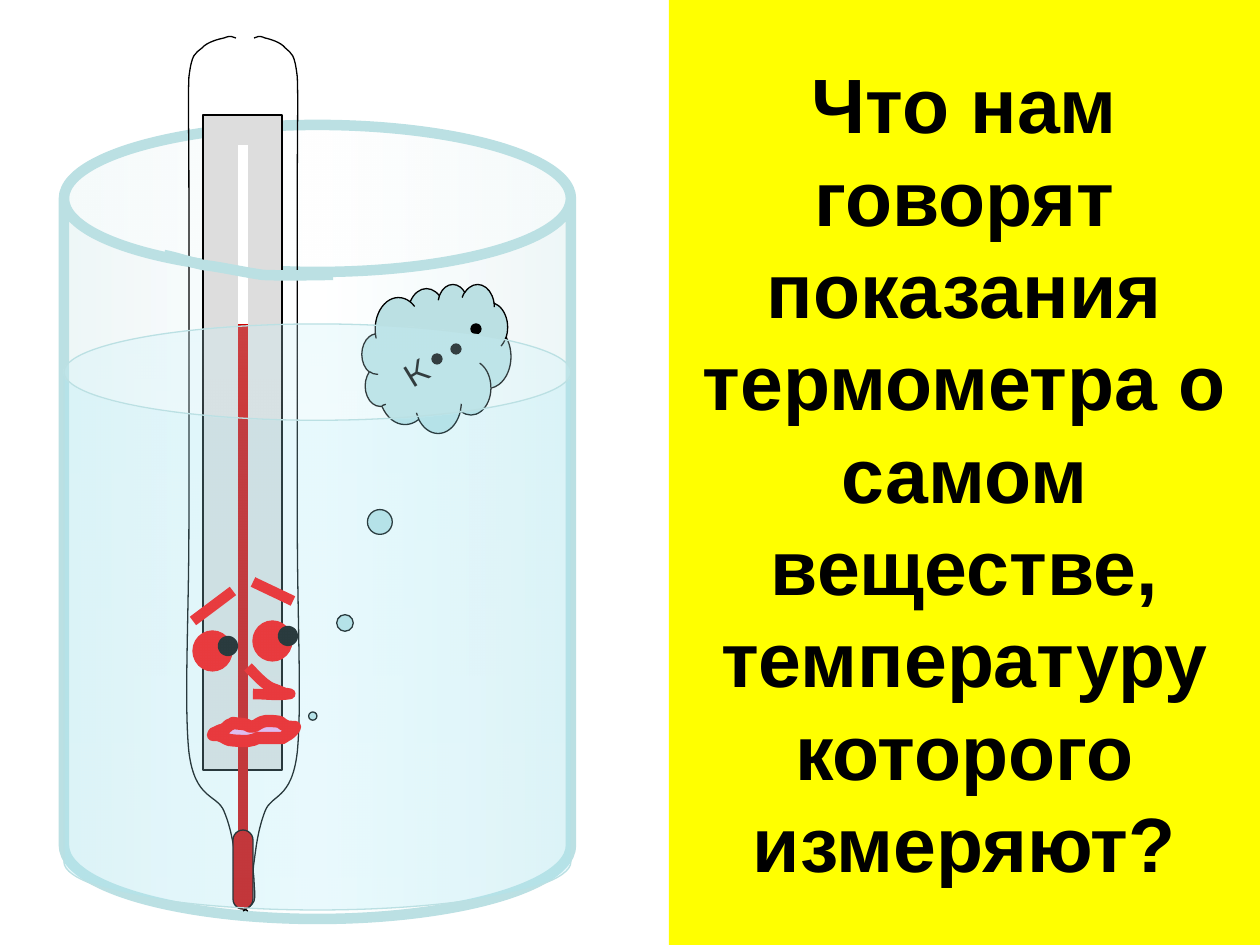
from dataclasses import dataclass

from lxml import etree
from pptx import Presentation
from pptx import util as u
from pptx.dml.color import RGBColor
from pptx.enum import shapes, text
from pptx.oxml import ns

PX = u.Inches(1) / 126
PRESET = shapes.MSO_SHAPE


@dataclass(frozen=True)
class Theme:
    panel: str = "FFFF00"
    glass: str = "BBE0E3"
    shine: str = "FFFFFF"
    water: str = "A6EAF8"
    ink: str = "000000"
    scale: str = "DDDDDD"
    mercury: str = "CC0000"
    face: str = "FF0000"
    lips: str = "F1ADEC"
    question_font: str = "Arial"
    question_size: int = 44
    thought_font: str = "Montserrat"
    thought_size: int = 24
    thin: float = 0.75
    thick: int = 6
    lip_width: int = 7


@dataclass(frozen=True)
class Body:
    preset: int
    box: tuple[int, int, int, int]
    fill: str | None
    line: str | None
    width: float = 0.75
    adjust: tuple[float, ...] = ()


@dataclass(frozen=True)
class Stroke:
    start: tuple[int, int]
    end: tuple[int, int]
    color: str


@dataclass(frozen=True)
class Curve:
    """A start point followed by triples of cubic Bezier points."""
    points: list[tuple[float, float]]
    line: str
    width: float
    fill: str | None = None
    closed: bool = False


@dataclass(frozen=True)
class Stop:
    position: int
    color: str
    opacity: int


T = Theme()
LEFT_GLASS = [
    (236, 38), (233, 37), (231, 35), (224, 38), (219, 39), (207, 42), (202, 48),
    (195, 54), (192, 53), (189, 77), (188, 102), (189, 122), (189, 197),
    (189, 271), (189, 431), (189, 524), (189, 616), (184, 704), (189, 752),
    (195, 800), (217, 794), (224, 811), (232, 830), (234, 849), (236, 862),
    (238, 873), (236, 874), (236, 881), (236, 888), (234, 896), (236, 901),
    (238, 906), (246, 910), (248, 911)]
RIGHT_GLASS = [(243 + (248 - x) * 0.92, y) for x, y in LEFT_GLASS]
NOSE = [
    (248, 667), (255, 674), (266, 687), (275, 689), (278, 690), (282, 692), (285, 693),
    (287, 693), (292, 694), (290, 694), (278, 696), (266, 694), (253, 694)]
MOUTH = [
    (223, 730), (226, 728), (227, 727), (229, 725), (231, 725), (233, 723), (233, 723),
    (248, 725), (239, 723), (247, 725), (253, 730), (258, 723), (262, 722),
    (263, 722), (265, 721), (266, 721), (271, 721), (275, 721), (280, 722),
    (282, 723), (284, 726), (286, 726), (287, 727), (292, 727), (295, 727),
    (294, 730), (289, 735), (285, 736), (284, 738), (284, 738), (280, 738),
    (272, 738), (265, 738), (258, 738), (255, 740), (252, 740), (248, 741),
    (242, 741), (236, 741), (229, 740), (227, 740), (226, 738), (223, 737),
    (219, 735), (218, 735), (213, 735), (214, 733), (214, 733), (215, 733),
    (217, 732), (218, 732), (219, 731), (220, 730), (222, 730), (223, 730)]
RIM = [
    (164, 255), (175, 257), (186, 261), (203, 265), (221, 267), (242, 272), (263, 275),
    (285, 276), (321, 275), (333, 275)]


def px(length: float) -> u.Emu:
    return u.Emu(round(length * PX))


def paint(shape, fill: str | None, line: str | None, width: float) -> None:
    shape.shadow.inherit = False
    if fill:
        shape.fill.solid()
        shape.fill.fore_color.rgb = RGBColor.from_string(fill)
    else:
        shape.fill.background()
    if line:
        shape.line.color.rgb = RGBColor.from_string(line)
        shape.line.width = u.Pt(width)
    else:
        shape.line.fill.background()


def add_body(slide, body: Body):
    shape = slide.shapes.add_shape(body.preset, *map(px, body.box))
    for index, value in enumerate(body.adjust):
        shape.adjustments[index] = value
    paint(shape, body.fill, body.line, body.width)
    return shape


def add_dot(slide, left: int, top: int, width: float = T.thin) -> None:
    add_body(slide, Body(PRESET.OVAL, (left, top, 10, 10), T.ink, T.ink, width))


def add_stroke(slide, stroke: Stroke) -> None:
    line = slide.shapes.add_connector(
        shapes.MSO_CONNECTOR.STRAIGHT, *map(px, stroke.start + stroke.end))
    line.line.color.rgb = RGBColor.from_string(stroke.color)
    line.line.width = u.Pt(T.thick)
    etree.SubElement(line._element.spPr, ns.qn("a:effectLst"))


def add_curve(slide, curve: Curve) -> None:
    """Build the control polygon, then join each three segments into one Bezier."""
    start, *controls = [(px(x), px(y)) for x, y in curve.points]
    builder = slide.shapes.build_freeform(*start)
    builder.add_line_segments(controls, close=curve.closed)
    shape = builder.convert_to_shape()
    segments = list(shape._element.iter(ns.qn("a:lnTo")))
    for i in range(0, len(segments), 3):
        bezier = etree.Element(ns.qn("a:cubicBezTo"))
        segments[i].addprevious(bezier)
        for segment in segments[i:i + 3]:
            bezier.append(segment[0])
            segment.getparent().remove(segment)
    paint(shape, curve.fill, curve.line, curve.width)


def add_can(slide, body: Body, stops: list[Stop], angle: int) -> None:
    """Add a cylinder with a see-through gradient."""
    can = add_body(slide, body)
    gradient = etree.Element(ns.qn("a:gradFill"), rotWithShape="1")
    stop_list = etree.SubElement(gradient, ns.qn("a:gsLst"))
    for stop in stops:
        mark = etree.SubElement(stop_list, ns.qn("a:gs"), pos=str(stop.position * 1000))
        color = etree.SubElement(mark, ns.qn("a:srgbClr"), val=stop.color)
        etree.SubElement(color, ns.qn("a:alpha"), val=str(stop.opacity * 1000))
    etree.SubElement(gradient, ns.qn("a:lin"), ang=str(angle * 60000), scaled="1")
    properties = can._element.spPr
    properties.replace(properties.find(ns.qn("a:noFill")), gradient)


def add_run(paragraph, words: str, font: str, size: int, bold: bool = False):
    run = paragraph.add_run()
    run.text = words
    run.font.name, run.font.size, run.font.bold = font, u.Pt(size), bold
    run.font.color.rgb = RGBColor.from_string(T.ink)
    return run


def add_question(slide) -> None:
    panel = add_body(slide, Body(PRESET.RECTANGLE, (669, 0, 591, 945), T.panel, None))
    panel.text_frame.word_wrap = True
    panel.text_frame.vertical_anchor = text.MSO_ANCHOR.MIDDLE
    question = panel.text_frame.paragraphs[0]
    question.alignment = text.PP_ALIGN.CENTER
    wide_gap = 3600
    for words, spacing in (
            ("Что нам говорят", 0), (" ", wide_gap),
            ("показания термометра о самом веществе, температуру которого измеряют?", 0)):
        run = add_run(question, words, T.question_font, T.question_size, bold=True)
        if spacing:
            run.font._element.set("spc", str(spacing))


def add_thermometer(slide) -> None:
    for glass in (LEFT_GLASS, RIGHT_GLASS):
        add_curve(slide, Curve(glass, T.ink, T.thin))
    add_body(slide, Body(PRESET.RECTANGLE, (203, 115, 79, 655), T.scale, T.ink))
    add_stroke(slide, Stroke((243, 324), (243, 900), T.mercury))
    add_body(slide, Body(
        PRESET.ROUNDED_RECTANGLE, (233, 830, 20, 79), T.mercury, T.ink, adjust=(0.5,)))
    add_stroke(slide, Stroke((243, 145), (243, 324), T.shine))


def add_face(slide) -> None:
    for brow in (Stroke((253, 582), (293, 601), T.face),
                 Stroke((193, 621), (233, 591), T.face)):
        add_stroke(slide, brow)
    for left, top in ((253, 621), (193, 631)):
        add_body(slide, Body(PRESET.OVAL, (left, top, 39, 40), T.face, T.face))
        add_dot(slide, left + 30, top + 10, T.thick)
    add_curve(slide, Curve(NOSE, T.face, T.thick))
    add_curve(slide, Curve(MOUTH, T.face, T.lip_width, T.lips, closed=True))


def add_thought(slide) -> None:
    add_body(slide, Body(PRESET.CLOUD_CALLOUT, (362, 284, 149, 149), T.glass, T.ink,
                         adjust=(-0.83, 2.4)))
    for left, top in ((432, 354), (451, 344), (471, 324)):
        add_dot(slide, left, top)
    letter = slide.shapes.add_textbox(*map(px, (382, 314, 137, 63)))
    letter.rotation = 328.5
    letter.text_frame.word_wrap = True
    add_run(letter.text_frame.paragraphs[0], "к", T.thought_font, T.thought_size)


def main() -> None:
    deck = Presentation()
    deck.slide_width, deck.slide_height = px(1260), px(945)
    slide = deck.slides.add_slide(deck.slide_layouts[6])
    add_question(slide)
    add_can(slide, Body(PRESET.CAN, (64, 125, 507, 794), None, T.glass, T.thick, (0.29,)),
            [Stop(0, T.glass, 24), Stop(50, T.shine, 23), Stop(100, T.glass, 24)], 0)
    add_thermometer(slide)
    add_face(slide)
    add_thought(slide)
    add_curve(slide, Curve(RIM, T.glass, T.thick))
    add_can(slide, Body(PRESET.CAN, (64, 324, 507, 586), None, T.glass, adjust=(0.19,)),
            [Stop(0, T.water, 27), Stop(100, T.water, 24)], 90)
    deck.save("out.pptx")


if __name__ == "__main__":
    main()
